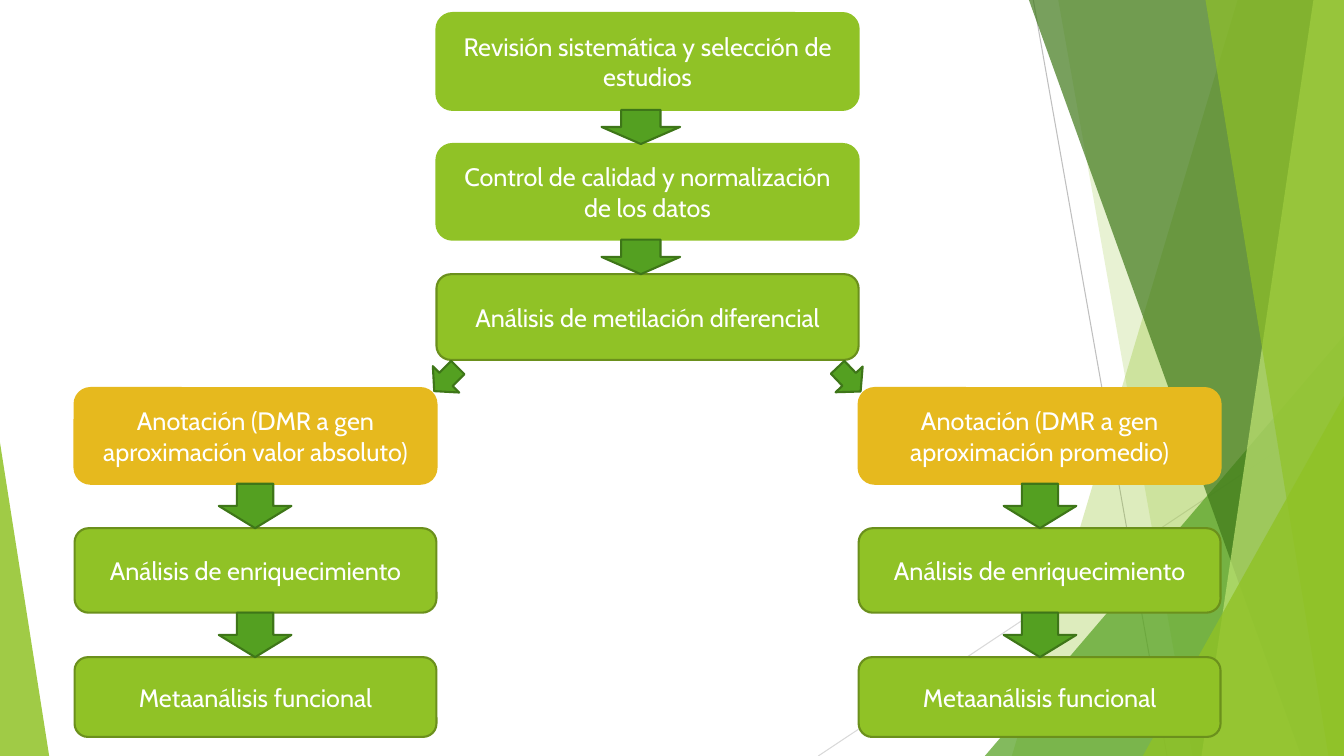
import pptx
import pptx.util
import pptx.dml.color
import pptx.enum.shapes
import pptx.enum.text
import lxml.etree

Cm = pptx.util.Cm
SHAPE = pptx.enum.shapes.MSO_SHAPE
DRAWING = "{http://schemas.openxmlformats.org/drawingml/2006/main}"
WIDTH, HEIGHT = 33.87, 19.05

COLOURS = {
    "lime": "90C226", "lime edge": "6B901C", "pale lime": "C0E474",
    "green": "54A021", "green edge": "3E7618", "dark green": "3F7819",
    "gold": "E6B91E", "white": "FFFFFF", "grey": "BFBFBF", "light grey": "D9D9D9",
}

# Background: start and end of each line, colour
RAYS = [
    ((26.04, 0), (29.41, HEIGHT), "grey"),
    ((WIDTH, 10.24), (20.62, HEIGHT), "light grey"),
]
# Panels reach the right edge: left x at the top, left x at the bottom, colour, opacity
# Triangles stand on the bottom edge: left, width, height, apex, colour, opacity
BACKGROUND = [
    ("panel", 31.19, 25.5, "lime", 30),
    ("panel", 26.67, 30.05, "lime", 20),
    ("triangle", 24.82, 9.05, 10.59, 1, "green", 72),
    ("panel", 25.93, 32.79, "dark green", 70),
    ("panel", 33.1, 30.28, "pale lime", 70),
    ("panel", 30.38, 33.48, "lime", 65),
    ("triangle", 28.8, 5.07, 9.07, 1, "lime", 80),
    ("triangle", 0, 1.24, 7.9, 0, "lime", 85),
]

# Steps: text, top, height, fill, edge
MAIN_STEPS = [
    ("Revisión sistemática y selección de estudios", 0.33, 2.44, "lime", "lime"),
    ("Control de calidad y normalización de los datos", 3.63, 2.41, "lime", "lime"),
    ("Análisis de metilación diferencial", 6.91, 2.16, "lime", "lime edge"),
]
SHARED_STEPS = [
    ("Análisis de enriquecimiento", 13.31, 2.13, "lime", "lime edge"),
    ("Metaanálisis funcional", 16.56, 2.01, "lime", "lime edge"),
]


def branch_steps(method):
    text = f"Anotación (DMR a gen aproximación {method})"
    return [(text, 9.78, 2.41, "gold", "gold")] + SHARED_STEPS


# Columns: left, box width, arrow centre, arrow width, steps
COLUMNS = [
    (11, 10.64, 16.15, 1.98, MAIN_STEPS),
    (1.88, 9.12, 6.43, 1.83, branch_steps("valor absoluto")),
    (21.64, 9.12, 26.21, 1.83, branch_steps("promedio")),
]
# Arrows from the main column to the branches: left, rotation
FORKS = [(10.77, 45), (20.93, 316.5)]


def rgb(name):
    return pptx.dml.color.RGBColor.from_string(COLOURS[name])


def paint(shape, fill, edge=None, opacity=100):
    shape.shadow.inherit = False
    shape.fill.solid()
    shape.fill.fore_color.rgb = rgb(fill)
    if edge:
        shape.line.color.rgb = rgb(edge)
        shape.line.width = pptx.util.Pt(1.5)
    else:
        shape.line.fill.background()
    if opacity < 100:
        colour = shape.fill._xPr.find(f".//{DRAWING}srgbClr")
        lxml.etree.SubElement(colour, f"{DRAWING}alpha", val=str(opacity * 1000))


def write(shape, text, size=18, font="Cabin", colour="white"):
    frame = shape.text_frame
    frame.word_wrap = True
    frame.vertical_anchor = pptx.enum.text.MSO_ANCHOR.MIDDLE
    para = frame.paragraphs[0]
    para.alignment = pptx.enum.text.PP_ALIGN.CENTER
    span = para.add_run()
    span.text = text
    span.font.size = pptx.util.Pt(size)
    span.font.name = font
    span.font.color.rgb = rgb(colour)


def add_preset(page, kind, left, top, width, height):
    return page.shapes.add_shape(kind, Cm(left), Cm(top), Cm(width), Cm(height))


def add_ray(page, start, end, colour):
    ray = page.shapes.add_connector(
        pptx.enum.shapes.MSO_CONNECTOR.STRAIGHT, *map(Cm, start + end))
    ray.line.color.rgb = rgb(colour)
    ray.line.width = pptx.util.Pt(0.75)
    lxml.etree.SubElement(ray._element.spPr, f"{DRAWING}effectLst")


def add_panel(page, top_x, bottom_x, colour, opacity):
    outline = page.shapes.build_freeform(Cm(top_x), 0)
    corners = [(WIDTH, 0), (WIDTH, HEIGHT), (bottom_x, HEIGHT)]
    outline.add_line_segments([(Cm(x), Cm(y)) for x, y in corners], close=True)
    paint(outline.convert_to_shape(), colour, opacity=opacity)


def add_triangle(page, left, width, height, apex, colour, opacity):
    triangle = add_preset(
        page, SHAPE.ISOSCELES_TRIANGLE, left, HEIGHT - height, width, height)
    triangle.adjustments[0] = apex
    paint(triangle, colour, opacity=opacity)


def add_arrow(page, left, top, width, height, rotation=0):
    arrow = add_preset(page, SHAPE.DOWN_ARROW, left, top, width, height)
    arrow.rotation = rotation
    paint(arrow, "green", "green edge")


def add_column(page, left, width, centre, arrow_width, steps):
    """Stack the boxes and fill each gap between them with an arrow."""
    for text, top, height, fill, edge in steps:
        box = add_preset(page, SHAPE.ROUNDED_RECTANGLE, left, top, width, height)
        paint(box, fill, edge)
        write(box, text)
    for upper, lower in zip(steps, steps[1:]):
        bottom = upper[1] + upper[2]
        add_arrow(page, centre - arrow_width / 2, bottom, arrow_width, lower[1] - bottom)


def main():
    deck = pptx.Presentation()
    deck.slide_width, deck.slide_height = Cm(WIDTH), Cm(HEIGHT)
    page = deck.slides.add_slide(deck.slide_layouts.get_by_name("Blank"))
    for ray in RAYS:
        add_ray(page, *ray)
    builders = {"panel": add_panel, "triangle": add_triangle}
    for kind, *values in BACKGROUND:
        builders[kind](page, *values)
    for column in COLUMNS:
        add_column(page, *column)
    for left, rotation in FORKS:
        add_arrow(page, left, 9.14, 0.94, 0.84, rotation)
    deck.save("out.pptx")


if __name__ == "__main__":
    main()
